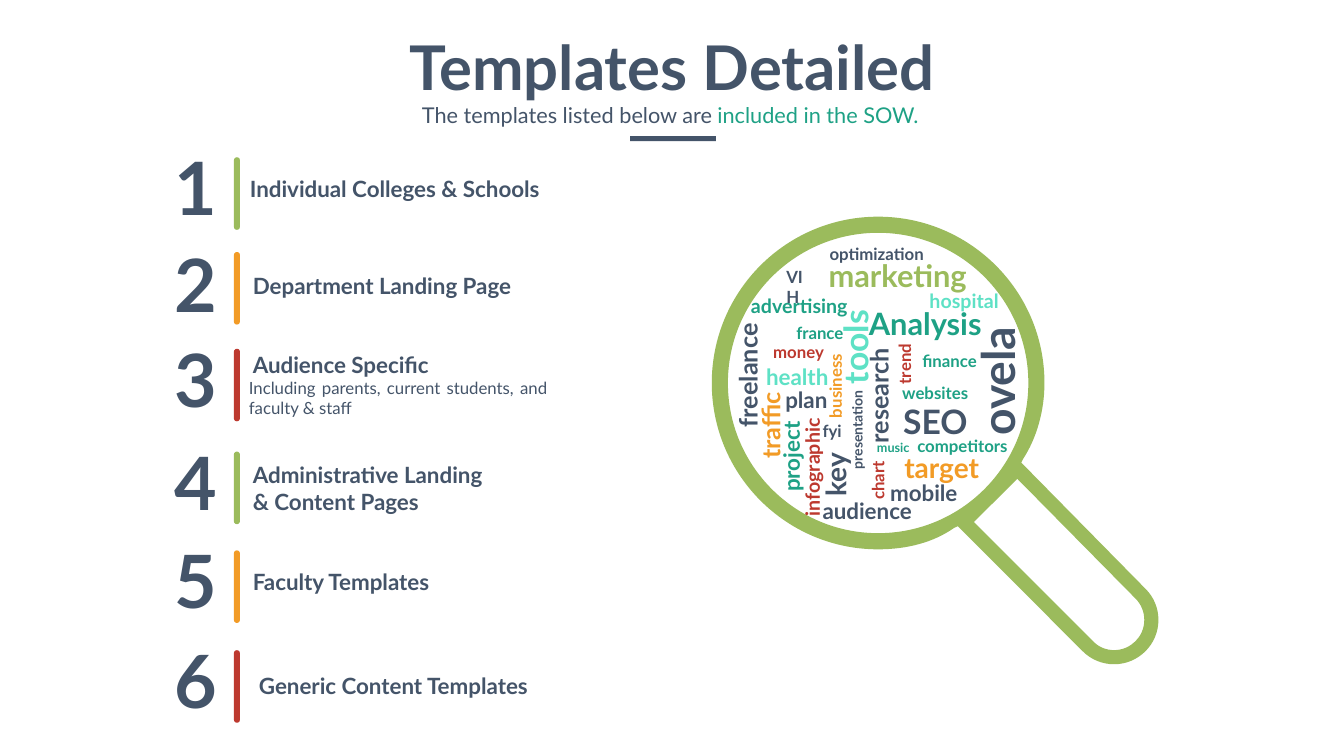
from math import cos, radians, sin, tan

from pptx import Presentation
from pptx import util as u
from pptx.dml.color import RGBColor
from pptx.enum import shapes, text
from pptx.oxml.ns import qn

NAVY, LIME, GOLD = "445469", "9BBB5C", "F29B26"
RED, TEAL, MINT = "BD392F", "1EA185", "5EE1C5"

# bar top, number top, bar colour, label left, label top, label lines
ITEMS = [
    (1.56, 1.36, LIME, 2.38, 1.69, ["Individual Colleges & Schools"]),
    (2.5, 2.32, GOLD, 2.41, 2.65, ["Department Landing Page"]),
    (3.46, 3.26, RED, 2.41, 3.43, ["Audience Specific"]),
    (4.48, 4.29, LIME, 2.41, 4.53, ["Administrative Landing", "& Content Pages"]),
    (5.46, 5.26, GOLD, 2.41, 5.59, ["Faculty Templates"]),
    (6.45, 6.25, RED, 2.47, 6.62, ["Generic Content Templates"]),
]

# word, left, top, width, size, colour
FLAT = [
    ("optimization", 8.13, 2.37, 1.2, 12, NAVY),
    ("Analysis", 8.52, 2.97, 1.47, 22, TEAL),
    ("health", 7.5, 3.55, 0.86, 16, MINT),
    ("SEO", 8.86, 3.93, 0.91, 24, NAVY),
    ("websites", 8.85, 3.75, 0.96, 12, TEAL),
    ("marketing", 8.12, 2.5, 1.68, 22, LIME),
    ("advertising", 7.35, 2.87, 1.24, 14, TEAL),
    ("france", 7.8, 3.15, 0.71, 12, TEAL),
    ("money", 7.57, 3.34, 0.74, 12, RED),
    ("hospital", 9.12, 2.82, 0.95, 14, MINT),
    ("plan", 7.69, 3.78, 0.66, 16, NAVY),
    ("finance", 9.05, 3.43, 0.79, 12, TEAL),
    ("audience", 8.06, 4.88, 1.17, 16, NAVY),
    ("competitors", 9, 4.27, 1.16, 12, TEAL),
    ("fyi", 8.06, 4.12, 0.4, 12, NAVY),
    ("music", 8.6, 4.31, 0.57, 9, TEAL),
    ("target", 8.87, 4.42, 0.98, 20, GOLD),
    ("mobile", 8.73, 4.7, 0.93, 16, NAVY),
]
TURNED = [
    ("tools", 7.98, 3.16, 1, 24, MINT),
    ("project", 7.37, 4.32, 0.95, 16, TEAL),
    ("research", 8.09, 3.67, 1.25, 18, NAVY),
    ("ovela", 9.19, 3.4, 1.39, 33, NAVY),
    ("traffic", 7.19, 4, 0.9, 18, GOLD),
    ("business", 7.82, 3.63, 0.93, 12, GOLD),
    ("freelance", 6.76, 3.48, 1.31, 18, NAVY),
    ("trend", 8.66, 3.45, 0.62, 12, RED),
    ("presentation", 7.98, 4.1, 1.04, 10, NAVY),
    ("infographic", 7.42, 4.42, 1.27, 14, RED),
    ("key", 7.95, 4.47, 0.67, 20, NAVY),
    ("chart", 8.4, 4.6, 0.61, 12, RED),
]


def rgb(code):
    return RGBColor.from_string(code)


def arc(x, y, r, *stops):
    """Bezier curves through the angles, in degrees clockwise from the right."""
    curves = []
    for a, b in zip(map(radians, stops), map(radians, stops[1:])):
        k = 4 / 3 * tan((b - a) / 4)
        curves.append([(x + r * (cos(a) - k * sin(a)), y + r * (sin(a) + k * cos(a))),
                       (x + r * (cos(b) + k * sin(b)), y + r * (sin(b) - k * cos(b))),
                       (x + r * cos(b), y + r * sin(b))])
    return curves


class Deck:
    """Holds the style and the current slide."""

    font = "Lato"

    def __init__(self, prs):
        self.slide = prs.slides.add_slide(prs.slide_layouts[0])
        self.items = self.slide.shapes

    def style(self, para, size, color, bold=True, align=text.PP_ALIGN.LEFT):
        para.alignment = align
        font = para.font
        font.name, font.size, font.bold = self.font, u.Pt(size), bold
        font.color.rgb = rgb(color)

    def paint(self, shape, color):
        shape.shadow.inherit = False
        shape.fill.solid()
        shape.fill.fore_color.rgb = rgb(color)
        shape.line.fill.background()

    def holder(self, index, box, pad, size, bold):
        """Move and format a placeholder; give back its paragraph."""
        shape = self.slide.placeholders[index]
        shape.left, shape.top, shape.width, shape.height = map(u.Inches, box)
        frame = shape.text_frame
        frame.auto_size = text.MSO_AUTO_SIZE.NONE
        frame.vertical_anchor = text.MSO_ANCHOR.TOP
        frame.margin_left = frame.margin_right = u.Inches(pad[0])
        frame.margin_top = frame.margin_bottom = u.Inches(pad[1])
        para = frame.paragraphs[0]
        self.style(para, size, NAVY, bold, text.PP_ALIGN.CENTER)
        return para

    def label(self, lines, box, size, color=NAVY, bold=True, wrap=True,
              align=text.PP_ALIGN.LEFT):
        shape = self.items.add_textbox(*map(u.Inches, box))
        frame = shape.text_frame
        frame.word_wrap = wrap
        frame.text = "\n".join(lines)
        for para in frame.paragraphs:
            self.style(para, size, color, bold, align)
        return shape

    def word(self, name, x, y, wide, size, color, turn=0):
        high = size * 1.2 / 72 + 0.1
        shape = self.label([name], (x, y, wide, high), size, color, wrap=False)
        shape.rotation = turn

    def bar(self, kind, box, color):
        shape = self.items.add_shape(kind, *map(u.Inches, box))
        self.paint(shape, color)
        return shape

    def outline(self, loops, color):
        """Fill closed loops; a part of one point is a line, of three a curve."""
        pen = None
        for start, parts in loops:
            x, y = map(u.Inches, start)
            if pen is None:
                pen = self.items.build_freeform(x, y)
            else:
                pen.move_to(x, y)
            pen.add_line_segments([(u.Inches(x), u.Inches(y))
                                   for part in parts for x, y in part], close=True)
        shape = pen.convert_to_shape()
        self.paint(shape, color)
        nodes = iter(list(shape.element.iter(qn("a:lnTo"))))
        for part in (part for _, parts in loops for part in parts):
            node = next(nodes)
            if len(part) == 3:
                node.tag = qn("a:cubicBezTo")
                for extra in (next(nodes), next(nodes)):
                    node.append(extra[0])
                    extra.getparent().remove(extra)


def main():
    prs = Presentation()
    prs.slide_width, prs.slide_height = u.Inches(13.33), u.Inches(7.5)
    deck = Deck(prs)

    title = deck.holder(0, (0.94, 0.27, 11.46, 0.79), (0.05, 0.02), 44, True)
    title.add_run().text = "Templates Detailed"
    intro = deck.holder(1, (3.49, 0.9, 6.37, 0.46), (0.12, 0.06), 15.5, False)
    intro.line_spacing, intro.space_before = 1.2, u.Pt(3)
    intro.add_run().text = "The templates listed below are "
    scope = intro.add_run()
    scope.text = "included in the SOW. "
    scope.font.color.rgb = rgb(TEAL)
    kinds = shapes.MSO_SHAPE
    deck.bar(kinds.RECTANGLE, (6.25, 1.35, 0.85, 0.05), NAVY)

    for num, (top, digit, color, left, high, lines) in enumerate(ITEMS, 1):
        bar = deck.bar(kinds.ROUND_2_SAME_RECTANGLE, (2.32, top, 0.06, 0.72), color)
        bar.adjustments[0] = bar.adjustments[1] = 0.5
        deck.word(str(num), 1.63, digit, 0.61, 52.5, NAVY)
        deck.label(lines, (left, high, 4.9, 0.1 + 0.27 * len(lines)), 16)
    deck.label(["Including parents, current students, and faculty & staff"],
               (2.37, 3.7, 3.16, 0.5), 12, bold=False, align=text.PP_ALIGN.JUSTIFY)

    lens, tip = (8.71, 3.8), (11.05, 6.15)
    rim = [[(9.46, 5.24)], [(9.26, 5.38), (9, 5.45), (8.71, 5.45)],
           *arc(*lens, 1.65, 90, 180, 270, 360),
           [(10.36, 4.08), (10.28, 4.35), (10.15, 4.55)], [(10.13, 4.59)]]
    deck.outline([
        ((9.5, 5.22), rim + [[(11.36, 5.84)]] + arc(*tip, 0.44, -45, 0, 90, 135)),
        ((9.66, 5.18), [[(10.84, 6.36)], *arc(*tip, 0.3, 135, 90, 0, -45),
                        [(10.09, 4.75)]]),
        ((8.71, 2.31), arc(*lens, 1.49, 270, 180, 90, 0, -90)),
    ], LIME)
    for row in FLAT:
        deck.word(*row)
    for row in TURNED:
        deck.word(*row, turn=270)
    deck.label(["VIH"], (7.7, 2.6, 0.48, 0.3), 12)

    prs.save("out.pptx")


if __name__ == "__main__":
    main()
